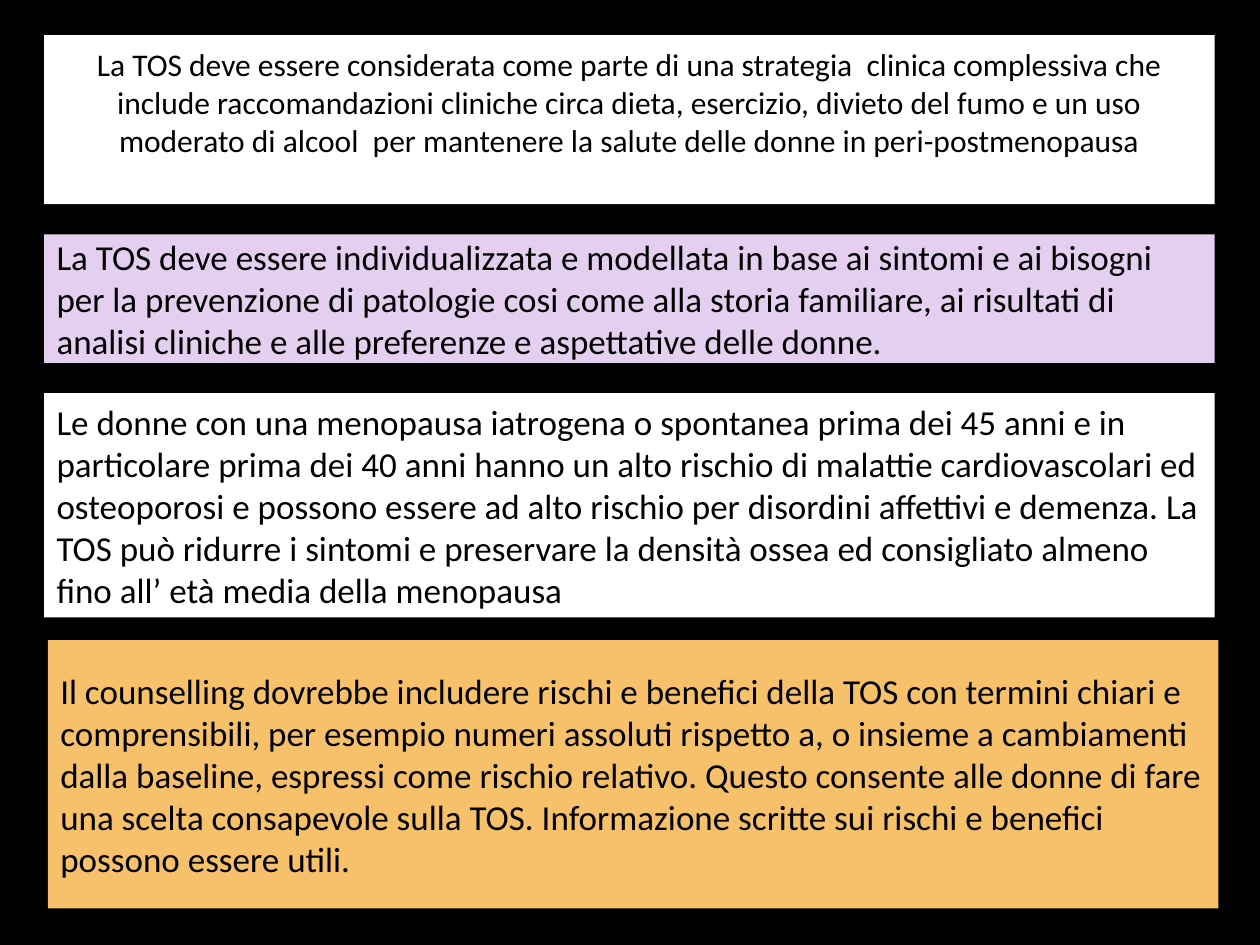
import pptx
import pptx.dml.color
import pptx.enum.shapes
import pptx.enum.text
import pptx.util

Inches = pptx.util.Inches
ALIGN = pptx.enum.text.PP_ALIGN

PANEL_WIDTH = 9.29
TITLE = (
    "La TOS deve essere considerata come parte di una strategia  clinica complessiva che "
    "include raccomandazioni cliniche circa dieta, esercizio, divieto del fumo e un uso "
    "moderato di alcool  per mantenere la salute delle donne in peri-postmenopausa"
)
STATEMENTS = [
    (0.35, 1.86, 1.02, "E5CFF1",
     "La TOS deve essere individualizzata e modellata in base ai sintomi e ai bisogni "
     "per la prevenzione di patologie cosi come alla storia familiare, ai risultati di "
     "analisi cliniche e alle preferenze e aspettative delle donne."),
    (0.35, 3.12, 1.78, "FFFFFF",
     "Le donne con una menopausa iatrogena o spontanea prima dei 45 anni e in "
     "particolare prima dei 40 anni hanno un alto rischio di malattie cardiovascolari ed "
     "osteoporosi e possono essere ad alto rischio per disordini affettivi e demenza. La "
     "TOS può ridurre i sintomi e preservare la densità ossea ed consigliato almeno "
     "fino all’ età media della menopausa"),
    (0.38, 5.08, 2.13, "F6C16A",
     "Il counselling dovrebbe includere rischi e benefici della TOS con termini chiari e "
     "comprensibili, per esempio numeri assoluti rispetto a, o insieme a cambiamenti "
     "dalla baseline, espressi come rischio relativo. Questo consente alle donne di fare "
     "una scelta consapevole sulla TOS. Informazione scritte sui rischi e benefici  "
     "possono essere utili."),
]


def color(value):
    return pptx.dml.color.RGBColor.from_string(value)


def add_panel(slide, left, top, height, fill, text, size=20, align=ALIGN.LEFT, bottom=0.05):
    shape = slide.shapes.add_shape(
        pptx.enum.shapes.MSO_SHAPE.RECTANGLE,
        Inches(left), Inches(top), Inches(PANEL_WIDTH), Inches(height))
    shape.shadow.inherit = False
    shape.fill.solid()
    shape.fill.fore_color.rgb = color(fill)
    shape.line.fill.background()
    frame = shape.text_frame
    frame.word_wrap = True
    frame.vertical_anchor = pptx.enum.text.MSO_ANCHOR.MIDDLE
    frame.margin_bottom = Inches(bottom)
    paragraph = frame.paragraphs[0]
    paragraph.alignment = align
    run = paragraph.add_run()
    run.text = text
    run.font.name = "Calibri"
    run.font.size = pptx.util.Pt(size)
    run.font.color.rgb = color("000000")


def main():
    presentation = pptx.Presentation()
    presentation.slide_width = Inches(10)
    presentation.slide_height = Inches(7.5)
    slide = presentation.slides.add_slide(presentation.slide_layouts[6])
    slide.background.fill.solid()
    slide.background.fill.fore_color.rgb = color("000000")
    add_panel(slide, 0.35, 0.28, 1.34, "FFFFFF", TITLE,
              size=18, align=ALIGN.CENTER, bottom=0.33)
    for statement in STATEMENTS:
        add_panel(slide, *statement)
    presentation.save("out.pptx")


if __name__ == "__main__":
    main()
